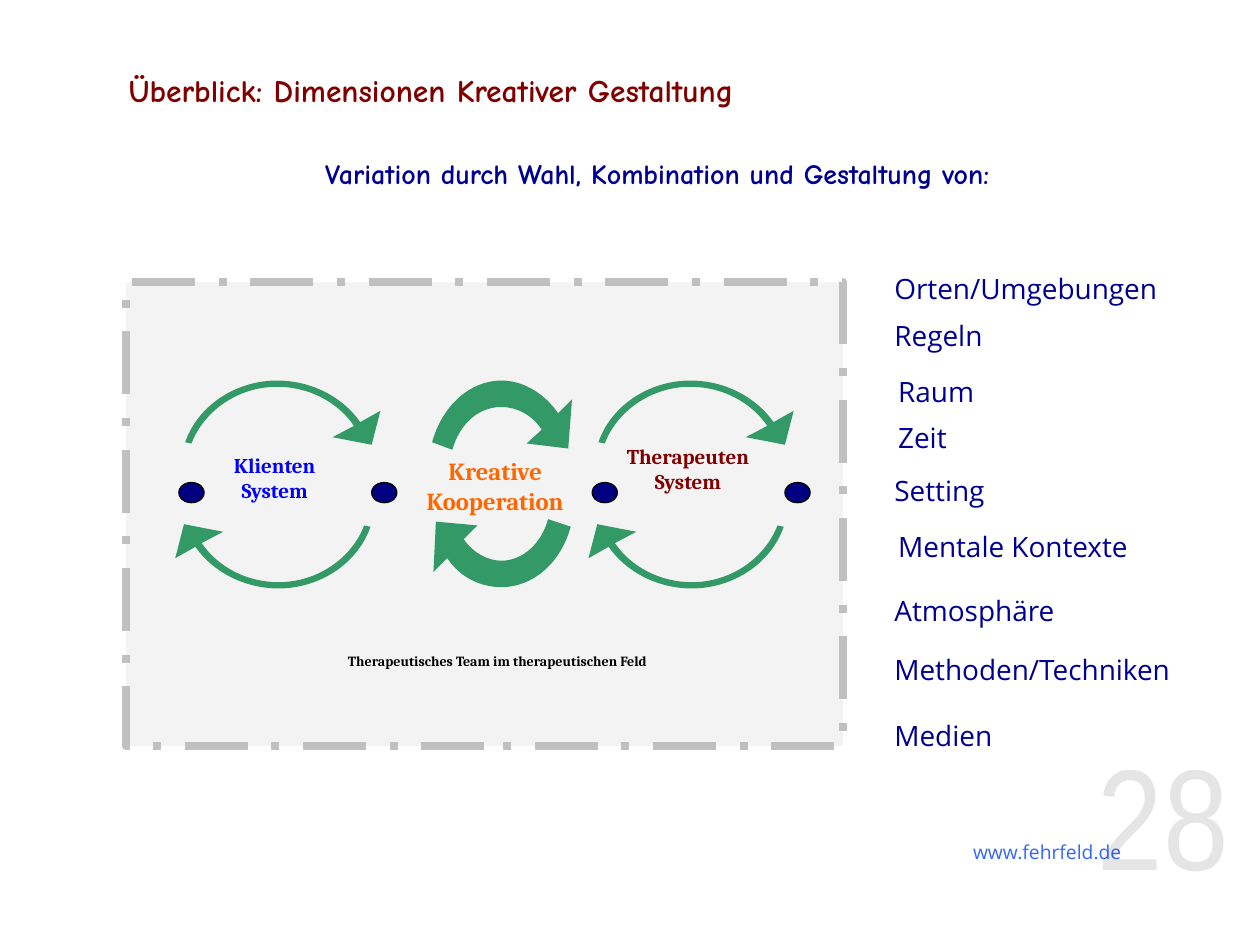
from lxml import etree
from pptx import Presentation
from pptx.dml.color import RGBColor
from pptx.enum import dml, shapes, text
from pptx.oxml.ns import qn
from pptx.util import Inches, Pt

NAVY, MAROON, GREEN, GREY = "000090", "800000", "339966", "C0C0C0"
LEFT, MID, RIGHT = text.PP_ALIGN.LEFT, text.PP_ALIGN.CENTER, text.PP_ALIGN.RIGHT

# Outlines around the centre of a cycle: start, two curves, a corner,
# two curves and the three corners of the arrowhead
THIN = [(.61, -.46), (.48, -.65), (.25, -.77), (0, -.77),
        (-.31, -.77), (-.58, -.58), (-.68, -.32), (-.73, -.33),
        (-.63, -.62), (-.33, -.82), (0, -.82),
        (.27, -.82), (.52, -.69), (.66, -.49),
        (.82, -.58), (.75, -.31), (.44, -.37)]
THICK = [(.32, -.43), (.24, -.55), (.12, -.61), (0, -.61),
         (-.18, -.61), (-.33, -.48), (-.39, -.27), (-.55, -.33),
         (-.47, -.62), (-.25, -.82), (0, -.82),
         (.17, -.82), (.34, -.72), (.45, -.56),
         (.56, -.67), (.53, -.28), (.2, -.32)]
LOW = [(-.3, .44), (-.22, .55), (-.11, .61), (0, .61),
       (.17, .61), (.32, .47), (.37, .28), (.55, .34),
       (.47, .63), (.25, .82), (0, .82),
       (-.17, .82), (-.33, .74), (-.43, .59),
       (-.54, .7), (-.52, .3), (-.19, .33)]
STEPS = (("moveTo", 1), ("cubicBezTo", 3), ("cubicBezTo", 3), ("lnTo", 1),
         ("cubicBezTo", 3), ("cubicBezTo", 3), ("lnTo", 1), ("lnTo", 1),
         ("lnTo", 1), ("close", 0))


def rgb(code):
    return RGBColor.from_string(code)


def alpha(fill, share):
    color = fill._xPr.find(qn("a:solidFill"))[0]
    etree.SubElement(color, qn("a:alpha")).set("val", str(share * 1000))


def write(shape, words, size, font, color, bold=False, align=LEFT,
          anchor=text.MSO_ANCHOR.TOP):
    frame = shape.text_frame
    frame.word_wrap = True
    frame.auto_size = text.MSO_AUTO_SIZE.NONE
    frame.vertical_anchor = anchor
    par = frame.paragraphs[0]
    par.text = words
    par.alignment = align
    par.font.size, par.font.name, par.font.bold = Pt(size), font, bold
    par.font.color.rgb = rgb(color)


def label(parent, box, *args, **style):
    shape = parent.add_textbox(*map(Inches, box))
    write(shape, *args, **style)
    return shape


def paint(shape, fill, line=None, width=0.75):
    shape.shadow.inherit = False
    shape.fill.solid()
    shape.fill.fore_color.rgb = rgb(fill)
    if line:
        shape.line.color.rgb = rgb(line)
        shape.line.width = Pt(width)
    else:
        shape.line.fill.background()


def arrow(parent, box, mid, outline, turn=0):
    x, y, w, h = map(Inches, box)
    build = parent.build_freeform(x, y, scale=1.0)
    build.add_line_segments([(x + w, y), (x + w, y + h), (x, y + h)])
    shape = build.convert_to_shape()
    # Curved outline in place of the plain box
    track = next(shape._element.iter(qn("a:path")))
    for step in list(track):
        track.remove(step)
    dots = iter(outline)
    for name, count in STEPS:
        step = etree.SubElement(track, qn("a:" + name))
        for _ in range(count):
            dx, dy = next(dots)
            dot = etree.SubElement(step, qn("a:pt"))
            dot.set("x", str(Inches(mid[0] + dx)))
            dot.set("y", str(Inches(mid[1] + dy)))
    shape.rotation = turn
    paint(shape, GREEN)


def thin(parent, x, y):
    for top, turn in ((y - .82, 0), (y - .55, 180)):
        arrow(parent, (x - .76, top, 1.53, 1.38), (.76, .82), THIN, turn)
    # Dots at both ends
    for dx in (-.78, .75):
        dot = parent.add_shape(shapes.MSO_SHAPE.OVAL, Inches(x + dx),
                               Inches(y - .01), Inches(.2), Inches(.16))
        paint(dot, "000080", "000000")


def thick(parent, x, y):
    for rise, outline in ((.82, THICK), (.55, LOW)):
        arrow(parent, (x - .57, y - rise, 1.15, 1.38), (.57, rise), outline)


def field(slide, left, top, width, height):
    parts = slide.shapes.add_group_shape().shapes
    # Dashed frame
    frame = parts.add_shape(shapes.MSO_SHAPE.RECTANGLE,
                            *map(Inches, (left, top, width, height)))
    paint(frame, GREY, GREY, 4.5)
    frame.line.dash_style = dml.MSO_LINE.LONG_DASH_DOT
    alpha(frame.fill, 18)
    # Three cycles: centre, kind, label, label box, top margin, size, colour
    for dx, draw, words, (lx, ly, high), gap, size, color in (
            (1.2, thin, "Klienten\nSystem", (.44, 1.31, .79), .04, 12, "0000FF"),
            (2.98, thick, "Kreative Kooperation", (2.19, 1.05, 1.05), .33, 14,
             "FF6600"),
            (4.48, thin, "Therapeuten\nSystem", (3.72, 1.05, 1.31), .23, 12,
             MAROON)):
        tag = label(parts, (left + lx, top + ly, 1.48, high), words, size,
                    "Cambria", color, True, MID).text_frame
        tag.margin_left = tag.margin_right = Inches(.07)
        tag.margin_top, tag.margin_bottom = Inches(gap), Inches(.04)
        draw(parts, left + dx, top + 1.6)
    # Caption
    label(parts, (left + 1.09, top + 2.89, 3.72, .53),
          "Therapeutisches Team im therapeutischen Feld", 8, "Cambria",
          "000000", True, MID)


def terms(slide, left, top):
    for words, dx, dy, width in (
            ("Orten/Umgebungen", 0, 0, 2.85), ("Regeln", 0, .37, 2.85),
            ("Raum", .03, .81, 2.85), ("Zeit", .03, 1.18, 1.97),
            ("Setting", 0, 1.6, 1.97), ("Mentale Kontexte", .03, 2.04, 2.85),
            ("Atmosphäre", 0, 2.55, 2.85), ("Methoden/Techniken", 0, 3.02, 2.85),
            ("Medien", 0, 3.54, 2.85)):
        label(slide.shapes, (left + dx, top + dy, width, .37), words, 16,
              "Open Sans", NAVY)


def head(slide, left, top, width):
    title = slide.shapes.title
    title.left, title.top = Inches(left), Inches(top)
    title.width, title.height = Inches(width), Inches(.4)
    write(title, "Überblick: Dimensionen Kreativer Gestaltung", 18,
          "Comic Neue", MAROON, True)
    lead = label(slide.shapes, (left - .33, top + .68, 8.58, .37),
                 "Variation durch Wahl, Kombination und Gestaltung von:", 16,
                 "Comic Neue", NAVY, True)
    lead.text_frame.margin_left = Inches(1.99)


def foot(slide, left, top, width):
    style = dict(align=RIGHT, anchor=text.MSO_ANCHOR.MIDDLE)
    label(slide.shapes, (left, top + .59, 8, .36), "www.fehrfeld.de", 11,
          "Open Sans", "3366FF", **style)
    page = label(slide.shapes, (left + width - 1.62, top, 1.62, .93), "28", 82,
                 "Arial Narrow", "000000", **style)
    alpha(page.text_frame.paragraphs[0].font.fill, 10)


def main():
    deck = Presentation()
    deck.slide_width, deck.slide_height = Inches(10), Inches(7.5)
    slide = deck.slides.add_slide(deck.slide_layouts[5])
    foot(slide, 1, 5.99, 8.85)
    field(slide, 1, 2.24, 5.69, 3.68)
    head(slide, .92, .51, 7.3)
    terms(slide, 7, 2.11)
    deck.save("out.pptx")


if __name__ == "__main__":
    main()
